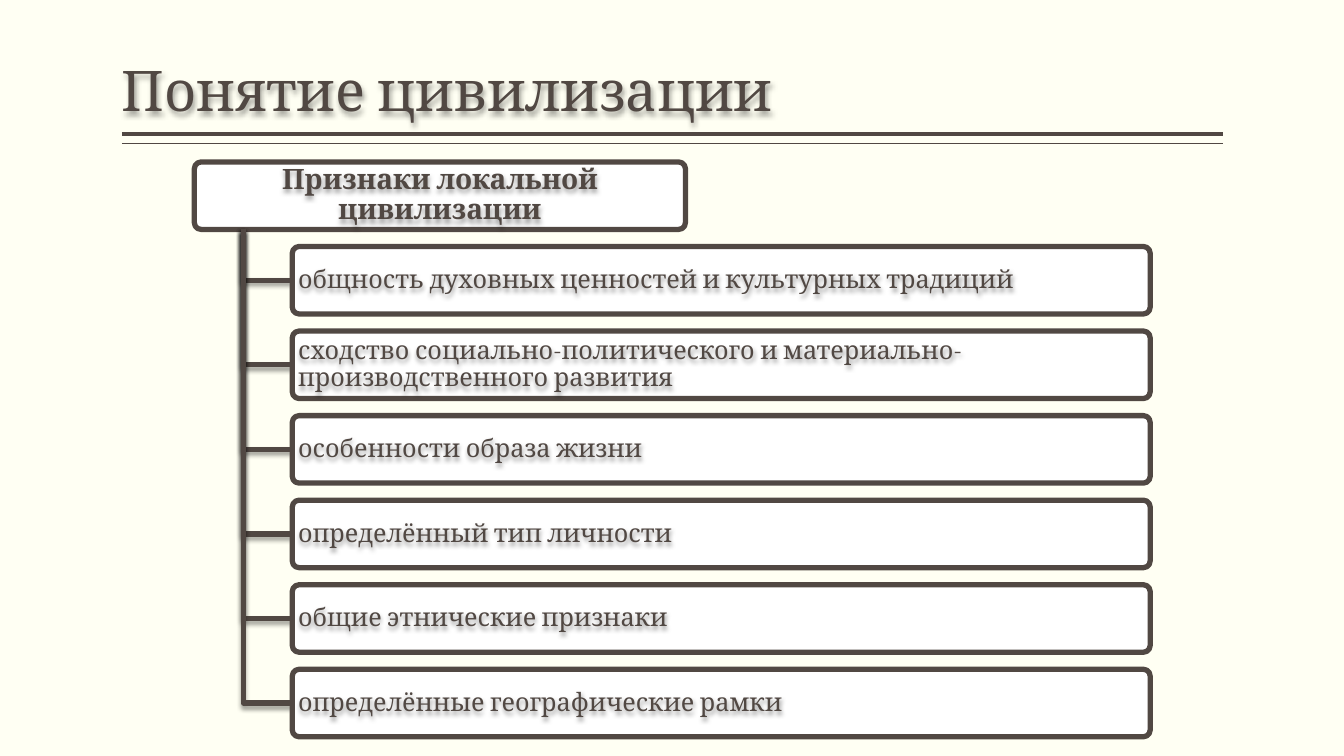
from lxml import etree
from pptx import Presentation
from pptx.dml.color import RGBColor
from pptx.enum.shapes import MSO_CONNECTOR, MSO_SHAPE
from pptx.enum.text import MSO_ANCHOR, MSO_AUTO_SIZE, PP_ALIGN
from pptx.oxml.ns import qn
from pptx.util import Pt

STRAIGHT = MSO_CONNECTOR.STRAIGHT
ROUNDED = MSO_SHAPE.ROUNDED_RECTANGLE
MIDDLE, BOTTOM = MSO_ANCHOR.MIDDLE, MSO_ANCHOR.BOTTOM
NO_AUTOFIT = MSO_AUTO_SIZE.NONE
LEFT, CENTER = PP_ALIGN.LEFT, PP_ALIGN.CENTER

CREAM = RGBColor(0xFF, 0xFF, 0xF3)
BROWN = RGBColor(0x51, 0x48, 0x43)
WHITE = RGBColor(0xFF, 0xFF, 0xFF)
SHADOW = RGBColor(0x00, 0x00, 0x00)

FONT = "Cambria"
TITLE_FONT = {"name": FONT, "size": Pt(40), "bold": False}
HEADING_FONT = {"name": FONT, "size": Pt(20), "bold": True}
FEATURE_FONT = {"name": FONT, "size": Pt(18), "bold": False}

TITLE = "Понятие цивилизации"
HEADING = "Признаки локальной цивилизации"
FEATURES = [
    "общность духовных ценностей и культурных традиций",
    "сходство социально-политического и материально-производственного развития",
    "особенности образа жизни",
    "определённый тип личности",
    "общие этнические признаки",
    "определённые географические рамки",
]

MARGIN_LEFT, MARGIN_RIGHT = 87.12, 873.36
BOX_HEIGHT = 48.2
BOX_LINE = 3.78
BOX_STEP = 60.4
HEADING_LEFT, HEADING_TOP, HEADING_WIDTH = 138.8, 115.7, 350.8
FEATURE_LEFT, FEATURE_WIDTH = 208.8, 612.8
TRUNK_X = 173.8
LABEL_INSET = 1.44


def place(shape, left, top, width, height):
    values = {"left": left, "top": top, "width": width, "height": height}
    for name, value in values.items():
        setattr(shape, name, Pt(value))


def add_soft_shadow(shape):
    """Cast a blurred shadow straight down."""
    shape.shadow.inherit = False
    effects = shape.element.spPr.find(qn("a:effectLst"))
    outer = etree.SubElement(effects, qn("a:outerShdw"), {
        "blurRad": str(Pt(3.5)), "dist": str(Pt(2)),
        "dir": "5400000", "algn": "ctr", "rotWithShape": "0"})
    color = etree.SubElement(outer, qn("a:srgbClr"), val=str(SHADOW))
    etree.SubElement(color, qn("a:alpha"), val="38000")


def write_text(shape, text, font, anchor, align, margins):
    frame = shape.text_frame
    frame.text = text
    side, edge = margins
    values = {
        "word_wrap": True, "auto_size": NO_AUTOFIT, "vertical_anchor": anchor,
        "margin_left": Pt(side), "margin_right": Pt(side),
        "margin_top": Pt(edge), "margin_bottom": Pt(edge),
    }
    for name, value in values.items():
        setattr(frame, name, value)
    para = frame.paragraphs[0]
    para.alignment = align
    para.line_spacing = 0.9
    para.space_before = Pt(0)
    span = para.runs[0]
    for name, value in font.items():
        setattr(span.font, name, value)
    span.font.color.rgb = BROWN


def set_line(shape, weight):
    shape.line.color.rgb = BROWN
    shape.line.width = Pt(weight)


def add_title(page):
    title = page.shapes.title
    place(title, MARGIN_LEFT, 5.76, MARGIN_RIGHT - MARGIN_LEFT, 86.4)
    title.fill.background()
    add_soft_shadow(title)
    write_text(title, TITLE, TITLE_FONT, BOTTOM, LEFT, (0, 3.6))


def add_rule(page, y, weight):
    rule = page.shapes.add_connector(
        STRAIGHT, Pt(MARGIN_LEFT), Pt(y), Pt(MARGIN_RIGHT), Pt(y))
    set_line(rule, weight)
    etree.SubElement(rule.element.spPr, qn("a:effectLst"))


def add_box(page, left, top, width, text, font, align, margins):
    """Draw a rounded frame and lay its shadowed label over it."""
    box = page.shapes.add_shape(
        ROUNDED, Pt(left), Pt(top), Pt(width), Pt(BOX_HEIGHT))
    box.adjustments[0] = 0.1
    box.shadow.inherit = False
    box.fill.solid()
    box.fill.fore_color.rgb = WHITE
    set_line(box, BOX_LINE)

    label = page.shapes.add_textbox(
        Pt(left + LABEL_INSET), Pt(top + LABEL_INSET),
        Pt(width - 2 * LABEL_INSET), Pt(BOX_HEIGHT - 2 * LABEL_INSET))
    add_soft_shadow(label)
    write_text(label, text, font, MIDDLE, align, margins)


def add_branch(page, y):
    """Draw the elbow from the heading down to a feature at height y."""
    builder = page.shapes.build_freeform(
        Pt(TRUNK_X), Pt(HEADING_TOP + BOX_HEIGHT))
    builder.add_line_segments(
        [(Pt(TRUNK_X), Pt(y)), (Pt(FEATURE_LEFT), Pt(y))], close=False)
    branch = builder.convert_to_shape()
    branch.fill.background()
    set_line(branch, BOX_LINE)
    add_soft_shadow(branch)


def main():
    deck = Presentation()
    deck.slide_width, deck.slide_height = Pt(960), Pt(540)
    page = deck.slides.add_slide(deck.slide_layouts[5])
    page.background.fill.solid()
    page.background.fill.fore_color.rgb = CREAM

    add_title(page)
    add_rule(page, 95.8, 3)
    add_rule(page, 102.6, 1)
    add_box(page, HEADING_LEFT, HEADING_TOP, HEADING_WIDTH,
            HEADING, HEADING_FONT, CENTER, (3, 2))
    for row, feature in enumerate(FEATURES, start=1):
        top = HEADING_TOP + row * BOX_STEP
        add_branch(page, top + BOX_HEIGHT / 2)
        add_box(page, FEATURE_LEFT, top, FEATURE_WIDTH,
                feature, FEATURE_FONT, LEFT, (2.7, 1.8))

    deck.save("out.pptx")


if __name__ == "__main__":
    main()
